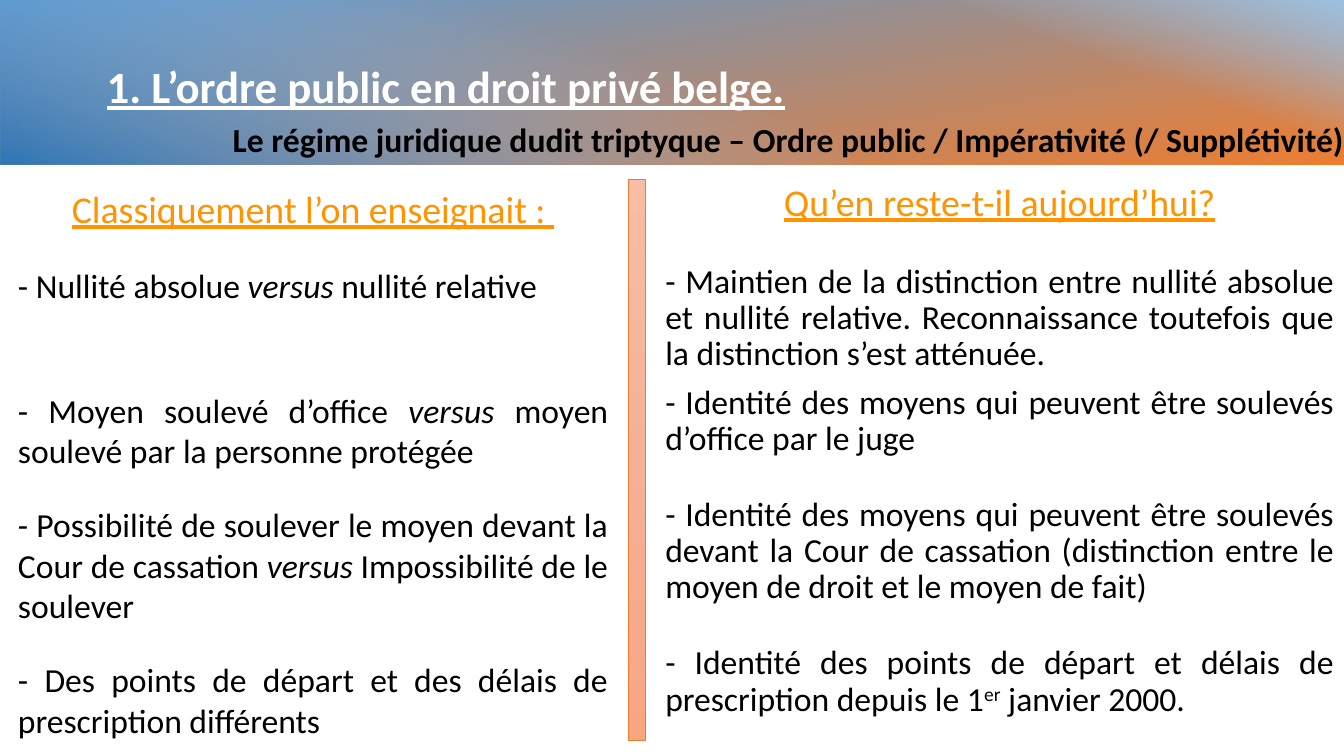
from dataclasses import dataclass

import lxml.etree
import pptx
import pptx.dml.color
import pptx.enum.shapes
import pptx.enum.text
import pptx.oxml.ns
import pptx.shapes.autoshape
import pptx.slide
import pptx.text.text
import pptx.util

Inches = pptx.util.Inches
Pt = pptx.util.Pt
RGBColor = pptx.dml.color.RGBColor
Align = pptx.enum.text.PP_ALIGN
Paragraph = pptx.text.text._Paragraph
qn = pptx.oxml.ns.qn

FONT = "Calibri"
WHITE = RGBColor(0xFF, 0xFF, 0xFF)
BLACK = RGBColor(0x00, 0x00, 0x00)
HEADING_ORANGE = RGBColor(0xFF, 0x93, 0x00)
ORANGE = RGBColor(0xED, 0x7D, 0x31)
BLUE = RGBColor(0x5B, 0x9B, 0xD5)
LIGHT_BLUE = RGBColor(0x9D, 0xC3, 0xE6)
DARK_BLUE = RGBColor(0x2E, 0x75, 0xB6)
PALE_SALMON = RGBColor(0xF7, 0xBD, 0xA5)
SALMON = RGBColor(0xF5, 0xB1, 0x96)
DEEP_SALMON = RGBColor(0xF8, 0xA5, 0x82)


@dataclass
class Box:
    left: float
    top: float
    width: float
    height: float


@dataclass
class Stop:
    percent: int
    color: RGBColor
    opaque: bool = True


@dataclass
class GradientBar:
    box: Box
    rotation: int
    angle: int
    stops: list[Stop]


@dataclass
class Piece:
    text: str
    italic: bool = False
    superscript: bool = False


@dataclass
class Point:
    """A paragraph and the space above it, in points."""
    space_before: float
    pieces: list[Piece]


@dataclass
class Column:
    box: Box
    heading: str
    line_spacing: float
    points: list[Point]


BAND = [
    GradientBar(Box(5.84, -5.87, 1.66, 13.34), 270, 170,
                [Stop(0, BLUE), Stop(100, ORANGE)]),
    GradientBar(Box(9.75, -1.97, 1.65, 5.54), 270, 20,
                [Stop(59, LIGHT_BLUE, False), Stop(100, LIGHT_BLUE)]),
    GradientBar(Box(3.39, -3.42, 1.66, 8.44), 90, 20,
                [Stop(29, LIGHT_BLUE, False), Stop(100, DARK_BLUE)]),
]
DIVIDER = GradientBar(Box(6.23, 1.78, 0.17, 5.57), 0, 90,
                      [Stop(0, PALE_SALMON), Stop(50, SALMON), Stop(100, DEEP_SALMON)])

LEFT_GAP = 24.2
LEFT_WIDE_GAP = 60.6
RIGHT_GAP = 28.4
RIGHT_NARROW_GAP = 8.7
VERSUS = Piece("versus", italic=True)

COLUMNS = [
    Column(Box(0.08, 1.79, 6.05, 5.56), "Classiquement l’on enseignait : ", 1.0, [
        Point(LEFT_GAP, [Piece("- Nullité absolue "), VERSUS, Piece(" nullité relative ")]),
        Point(LEFT_WIDE_GAP, [Piece("- Moyen soulevé d’office "), VERSUS,
                              Piece(" moyen soulevé par la personne protégée")]),
        Point(LEFT_GAP, [
            Piece("- Possibilité de soulever le moyen devant la Cour de cassation "), VERSUS,
            Piece(" Impossibilité de le soulever")]),
        Point(LEFT_GAP, [
            Piece("- Des points de départ et des délais de prescription différents")]),
    ]),
    Column(Box(6.5, 1.77, 6.83, 5.56), "Qu’en reste-t-il aujourd’hui?", 0.9, [
        Point(RIGHT_GAP, [
            Piece("- Maintien de la distinction entre nullité absolue et nullité relative. "
                  "Reconnaissance toutefois que la distinction s’est atténuée.")]),
        Point(RIGHT_NARROW_GAP, [
            Piece("- Identité des moyens qui peuvent être soulevés d’office par le juge")]),
        Point(RIGHT_GAP, [
            Piece("- Identité des moyens qui peuvent être soulevés devant la Cour de cassation "
                  "(distinction entre le moyen de droit et le moyen de fait)")]),
        Point(RIGHT_GAP, [
            Piece("- Identité des points de départ et délais de prescription depuis le 1"),
            Piece("er", superscript=True), Piece(" janvier 2000.")]),
    ]),
]


def place(box: Box) -> list[pptx.util.Length]:
    return [Inches(length) for length in (box.left, box.top, box.width, box.height)]


def add_gradient_bar(slide: pptx.slide.Slide, bar: GradientBar) -> pptx.shapes.autoshape.Shape:
    shape = slide.shapes.add_shape(pptx.enum.shapes.MSO_SHAPE.RECTANGLE, *place(bar.box))
    shape.shadow.inherit = False
    shape.rotation = bar.rotation
    shape.line.fill.background()
    shape.fill.gradient()
    gradient = shape._element.spPr.find(qn("a:gradFill"))
    gradient.find(qn("a:lin")).set("ang", str(bar.angle * 60000))
    stop_list = gradient.find(qn("a:gsLst"))
    for default_stop in list(stop_list):
        stop_list.remove(default_stop)
    for stop in bar.stops:
        node = lxml.etree.SubElement(stop_list, qn("a:gs"), pos=str(stop.percent * 1000))
        color = lxml.etree.SubElement(node, qn("a:srgbClr"), val=str(stop.color))
        if not stop.opaque:
            lxml.etree.SubElement(color, qn("a:alpha"), val="0")
    return shape


def add_text_frame(slide: pptx.slide.Slide, box: Box, wrap: bool = True) -> pptx.text.text.TextFrame:
    text_frame = slide.shapes.add_textbox(*place(box)).text_frame
    text_frame.word_wrap = wrap
    return text_frame


def format_runs(paragraph: Paragraph, size: int, color: RGBColor,
                bold: bool = False, underline: bool = False) -> None:
    for run in paragraph.runs:
        run.font.name = FONT
        run.font.size = Pt(size)
        run.font.color.rgb = color
        run.font.bold = bold
        run.font.underline = underline


def add_point(text_frame: pptx.text.text.TextFrame, point: Point, line_spacing: float) -> None:
    paragraph = text_frame.add_paragraph()
    paragraph.alignment = Align.JUSTIFY
    paragraph.line_spacing = line_spacing
    paragraph.space_before = Pt(point.space_before)
    for piece in point.pieces:
        run = paragraph.add_run()
        run.text = piece.text
        run.font.italic = piece.italic
        if piece.superscript:
            run.font._element.set("baseline", "30000")
    format_runs(paragraph, 24, BLACK)


def add_column(slide: pptx.slide.Slide, column: Column) -> None:
    text_frame = add_text_frame(slide, column.box)
    text_frame.text = column.heading
    heading = text_frame.paragraphs[0]
    heading.alignment = Align.CENTER
    heading.line_spacing = column.line_spacing
    format_runs(heading, 27, HEADING_ORANGE, underline=True)
    for point in column.points:
        add_point(text_frame, point, column.line_spacing)


def main() -> None:
    presentation = pptx.Presentation()
    presentation.slide_width = Inches(13.33)
    presentation.slide_height = Inches(7.5)
    slide = presentation.slides.add_slide(presentation.slide_layouts[6])

    for bar in BAND:
        add_gradient_bar(slide, bar)

    title = add_text_frame(slide, Box(0.96, 0.33, 11.46, 1.1))
    title.vertical_anchor = pptx.enum.text.MSO_ANCHOR.MIDDLE
    title.text = "1. L’ordre public en droit privé belge."
    title.paragraphs[0].line_spacing = 0.9
    format_runs(title.paragraphs[0], 32, WHITE, bold=True, underline=True)

    for column in COLUMNS:
        add_column(slide, column)

    divider = add_gradient_bar(slide, DIVIDER)
    divider.line.color.rgb = ORANGE
    divider.line.width = Pt(0.5)

    subtitle = add_text_frame(slide, Box(2.21, 1.13, 11.34, 0.5), wrap=False)
    subtitle.text = ("Le régime juridique dudit triptyque – "
                     "Ordre public / Impérativité (/ Supplétivité)")
    format_runs(subtitle.paragraphs[0], 24, BLACK, bold=True)

    presentation.save("out.pptx")


if __name__ == "__main__":
    main()
